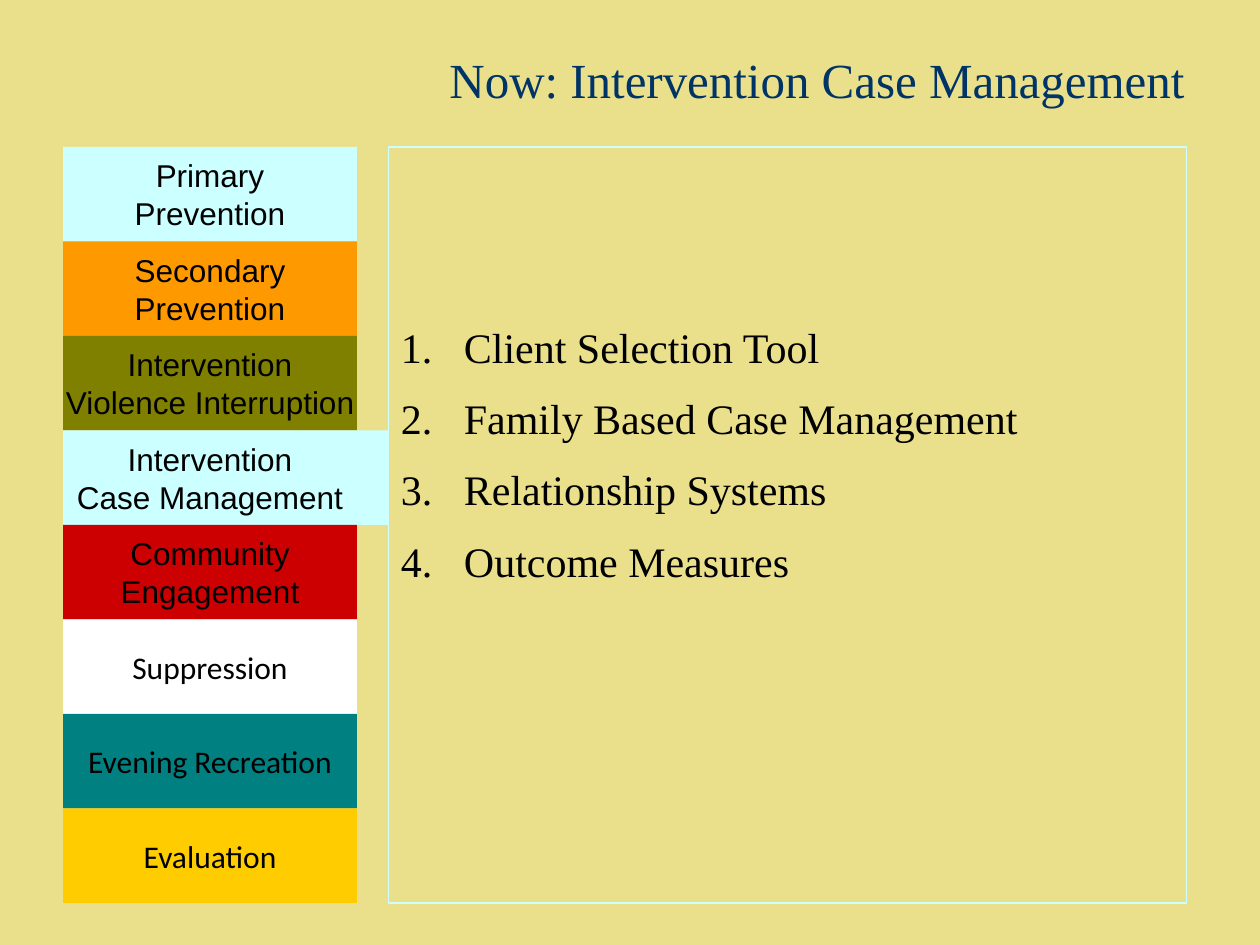
import pptx
import pptx.dml.color
import pptx.enum.shapes
import pptx.enum.text
import pptx.util
import lxml.etree
from pptx.oxml.ns import qn

WIDTH, HEIGHT = 10, 7.5
MARGIN = 0.05 * WIDTH
STAGE_WIDTH = 7 / 3
STAGE_HEIGHT = 0.1 * HEIGHT
STAGE_TOP = 7 / 6
GAP = 0.25
PANEL_LEFT = MARGIN + STAGE_WIDTH + GAP
PANEL_WIDTH = 19 / 3
ACTIVE_STAGE = 3
ACTIVE_COLOUR = "CCFFFF"

STAGES = [
    (["Primary", "Prevention"], "CCFFFF", "Arial"),
    (["Secondary", "Prevention"], "FF9900", "Arial"),
    (["Intervention", "Violence Interruption"], "808000", "Arial"),
    (["Intervention", "Case Management"], ACTIVE_COLOUR, "Arial"),
    (["Community", "Engagement"], "CC0000", "Arial"),
    (["Suppression"], "FFFFFF", "Calibri"),
    (["Evening Recreation"], "008080", "Calibri"),
    (["Evaluation"], "FFCC00", "Calibri"),
]
TOPICS = [
    "Client Selection Tool",
    "Family Based Case Management",
    "Relationship Systems",
    "Outcome Measures",
]


def paint(fill, colour):
    """Apply a hex colour to the fill of a shape, line, font or background."""
    fill.solid()
    fill.fore_color.rgb = pptx.dml.color.RGBColor.from_string(colour)


def write(shape, lines, font="Times New Roman", size=18, colour="000000",
          align="LEFT", anchor="MIDDLE", wrap=True, before=0, numbered=False):
    """Write one paragraph per line into a shape."""
    frame = shape.text_frame
    frame.word_wrap = wrap
    frame.vertical_anchor = pptx.enum.text.MSO_ANCHOR[anchor]
    frame.text = "\n".join(lines)
    for paragraph in frame.paragraphs:
        paragraph.alignment = pptx.enum.text.PP_ALIGN[align]
        paragraph.space_before = pptx.util.Pt(before)
        for run in paragraph.runs:
            run.font.name = font
            run.font.size = pptx.util.Pt(size)
            paint(run.font.fill, colour)
        if numbered:
            number(paragraph)


def number(paragraph):
    """Give a paragraph an automatic number and a hanging indent."""
    properties = paragraph._p.get_or_add_pPr()
    indent = pptx.util.Inches(0.5)
    properties.set("marL", str(indent))
    properties.set("indent", str(-indent))
    bullet = lxml.etree.Element(qn("a:buAutoNum"), type="arabicPeriod")
    properties.find(qn("a:spcBef")).addnext(bullet)


def add_box(slide, left, top, width, height, fill=None, line=None):
    """Add a flat rectangle with an optional fill and outline."""
    box = slide.shapes.add_shape(
        pptx.enum.shapes.MSO_SHAPE.RECTANGLE,
        *map(pptx.util.Inches, (left, top, width, height)))
    box.shadow.inherit = False
    if fill:
        paint(box.fill, fill)
    else:
        box.fill.background()
    if line:
        paint(box.line.fill, line)
        box.line.width = pptx.util.Pt(0.75)
    else:
        box.line.fill.background()
    return box


def add_text(slide, left, top, width, height, lines, **text_format):
    """Add a text box with formatted lines."""
    area = slide.shapes.add_textbox(
        *map(pptx.util.Inches, (left, top, width, height)))
    write(area, lines, **text_format)


def add_stages(slide):
    """Stack the stages and tie the active one to the panel."""
    for row, (lines, colour, font) in enumerate(STAGES):
        top = STAGE_TOP + row * STAGE_HEIGHT
        stage = add_box(slide, MARGIN, top, STAGE_WIDTH, STAGE_HEIGHT, fill=colour)
        write(stage, lines, font=font, align="CENTER", wrap=False)
    add_box(slide, MARGIN + STAGE_WIDTH, STAGE_TOP + ACTIVE_STAGE * STAGE_HEIGHT,
            GAP, STAGE_HEIGHT, fill=ACTIVE_COLOUR)


def main():
    """Build and save the slide."""
    deck = pptx.Presentation()
    deck.slide_width = pptx.util.Inches(WIDTH)
    deck.slide_height = pptx.util.Inches(HEIGHT)
    slide = deck.slides.add_slide(deck.slide_layouts[6])
    paint(slide.background.fill, "EAE08C")
    add_text(slide, MARGIN, GAP, WIDTH - 2 * MARGIN, 0.1 * HEIGHT,
             ["Now: Intervention Case Management"],
             size=28, colour="003366", align="RIGHT")
    add_box(slide, PANEL_LEFT, STAGE_TOP, PANEL_WIDTH,
            len(STAGES) * STAGE_HEIGHT, line=ACTIVE_COLOUR)
    add_stages(slide)
    add_text(slide, PANEL_LEFT, HEIGHT / 3, PANEL_WIDTH, 2.3, TOPICS,
             size=24, anchor="TOP", before=12, numbered=True)
    deck.save("out.pptx")


if __name__ == "__main__":
    main()
